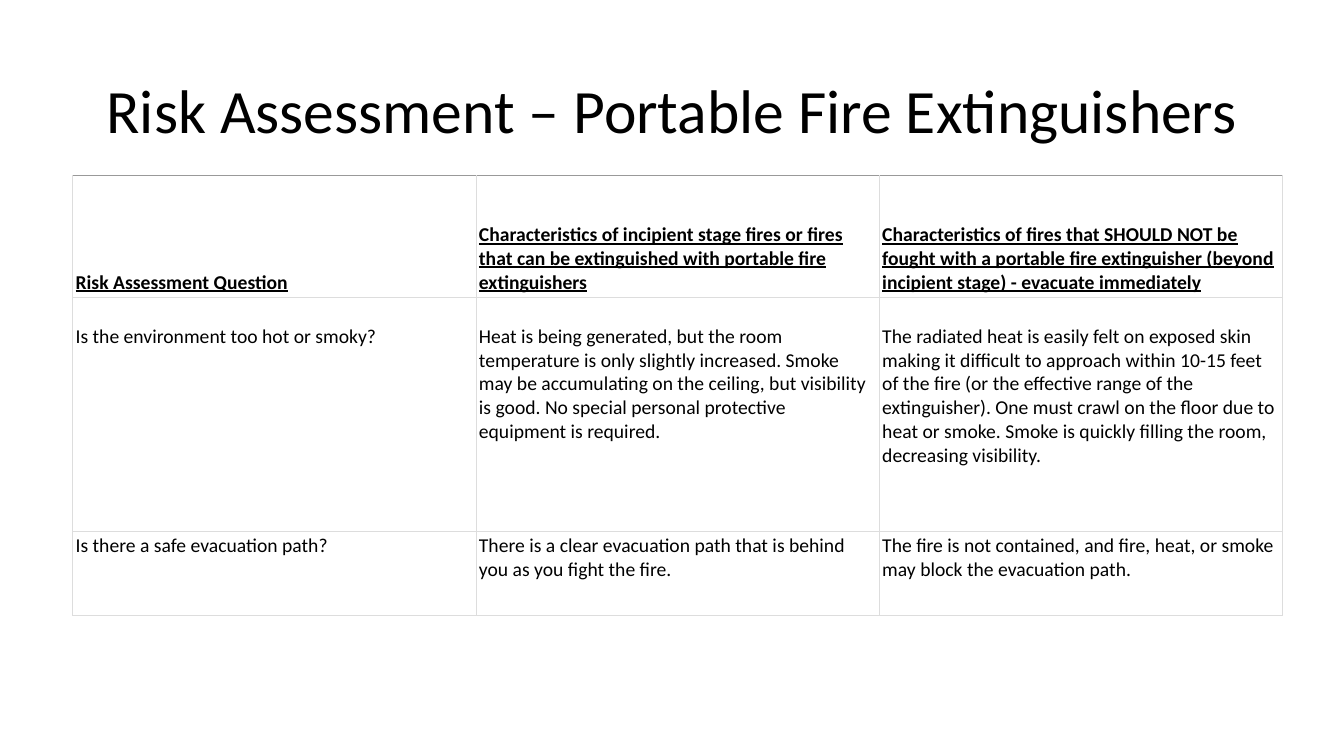
from lxml import etree
from pptx import Presentation
from pptx import util as u
from pptx.dml import color
from pptx.enum import text
from pptx.oxml import ns


def rgb(h):
    return color.RGBColor.from_string(h)


def border(cell, side, h):
    pr = cell._tc.get_or_add_tcPr()
    ln = etree.SubElement(pr, ns.qn("a:" + side), w=str(u.Pt(0.6)))
    fill = etree.SubElement(ln, ns.qn("a:solidFill"))
    etree.SubElement(fill, ns.qn("a:srgbClr"), val=h)


prs = Presentation()
prs.slide_width, prs.slide_height = u.Inches(13.33), u.Inches(7.5)
s = prs.slides.add_slide(prs.slide_layouts[6])

sp = s.shapes.add_textbox(u.Inches(0.92), u.Inches(0.4), u.Inches(11.5), u.Inches(1.45))
tf = sp.text_frame
tf.word_wrap = True
tf.vertical_anchor = text.MSO_ANCHOR.MIDDLE
p = tf.paragraphs[0]
p.text = "Risk Assessment – Portable Fire Extinguishers"
p.alignment = text.PP_ALIGN.CENTER
p.line_spacing = 0.9
p.font.name, p.font.size = "Calibri", u.Pt(44)
p.font.color.rgb = rgb("000000")

rows = [
    (1.21, 0.03, [
        "Risk Assessment Question",
        "Characteristics of incipient stage fires or fires that can be extinguished with portable fire extinguishers",
        "Characteristics of fires that SHOULD NOT be fought with a portable fire extinguisher (beyond incipient stage) - evacuate immediately",
    ]),
    (2.32, 0.27, [
        "Is the environment too hot or smoky?",
        "Heat is being generated, but the room temperature is only slightly increased. Smoke may be accumulating on the ceiling, but visibility is good. No special personal protective equipment is required.",
        "The radiated heat is easily felt on exposed skin making it difficult to approach within 10-15 feet of the fire (or the effective range of the extinguisher). One must crawl on the floor due to heat or smoke. Smoke is quickly filling the room, decreasing visibility.",
    ]),
    (0.84, 0.03, [
        "Is there a safe evacuation path?",
        "There is a clear evacuation path that is behind you as you fight the fire.",
        "The fire is not contained, and fire, heat, or smoke may block the evacuation path.",
    ]),
]

height = sum(row[0] for row in rows)
table = s.shapes.add_table(3, 3, u.Inches(0.72), u.Inches(1.74), u.Inches(12), u.Inches(height)).table
table.horz_banding = False
table.first_row = False
for col in table.columns:
    col.width = u.Inches(4)

for i, (row_height, top, words) in enumerate(rows):
    table.rows[i].height = u.Inches(row_height)
    header = i == 0
    for j, word in enumerate(words):
        cell = table.cell(i, j)
        cell.margin_left = cell.margin_right = cell.margin_bottom = u.Inches(0.03)
        cell.margin_top = u.Inches(top)
        cell.vertical_anchor = text.MSO_ANCHOR.BOTTOM if header else text.MSO_ANCHOR.TOP
        for side in ("lnL", "lnR", "lnT", "lnB"):
            border(cell, side, "999999" if header and side == "lnT" else "DDDDDD")
        cell.fill.solid()
        cell.fill.fore_color.rgb = rgb("FFFFFF")
        p = cell.text_frame.paragraphs[0]
        p.text = word
        p.font.name, p.font.size = "Calibri", u.Pt(14)
        p.font.bold = p.font.underline = header
        p.font.color.rgb = rgb("000000")

prs.save("out.pptx")
